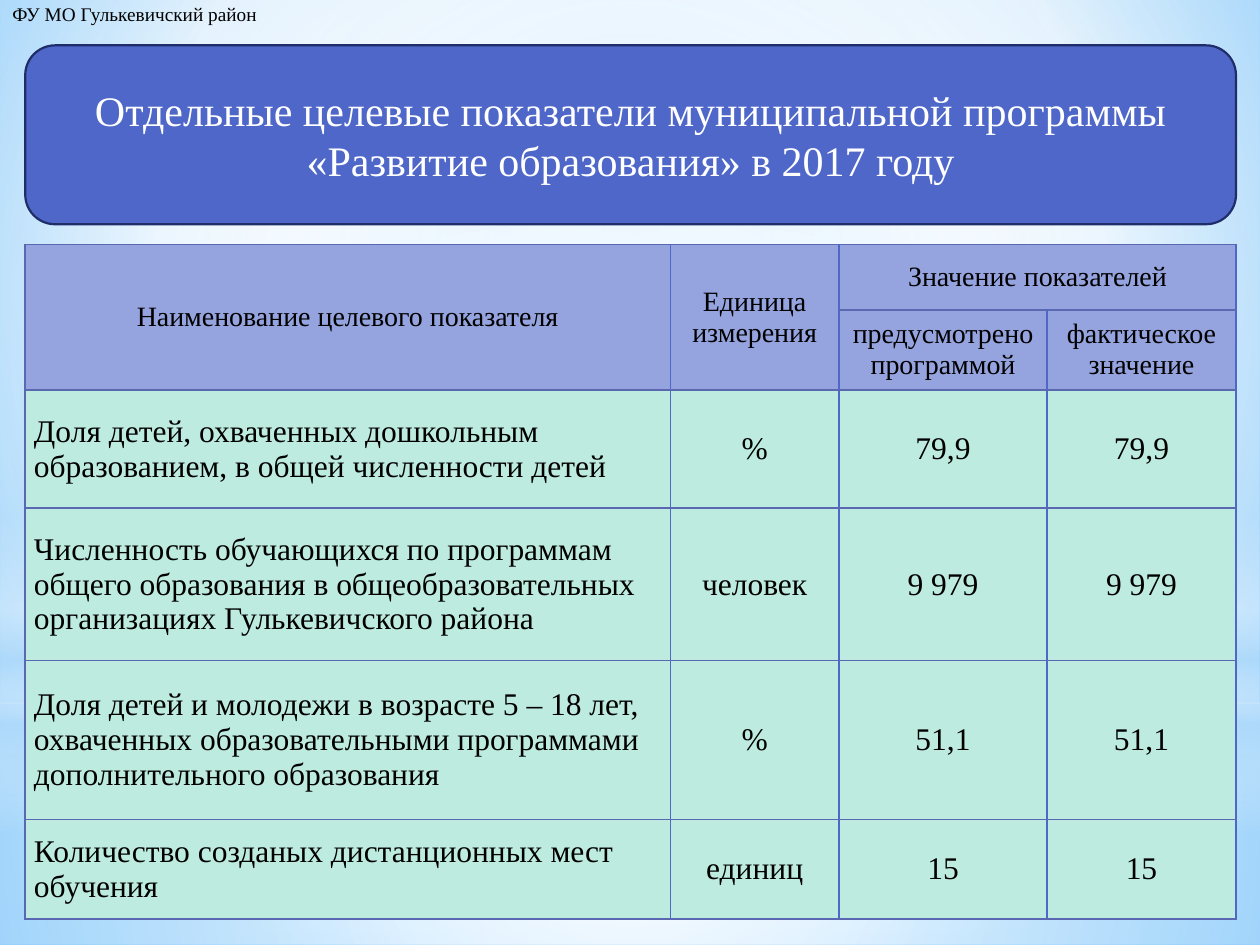
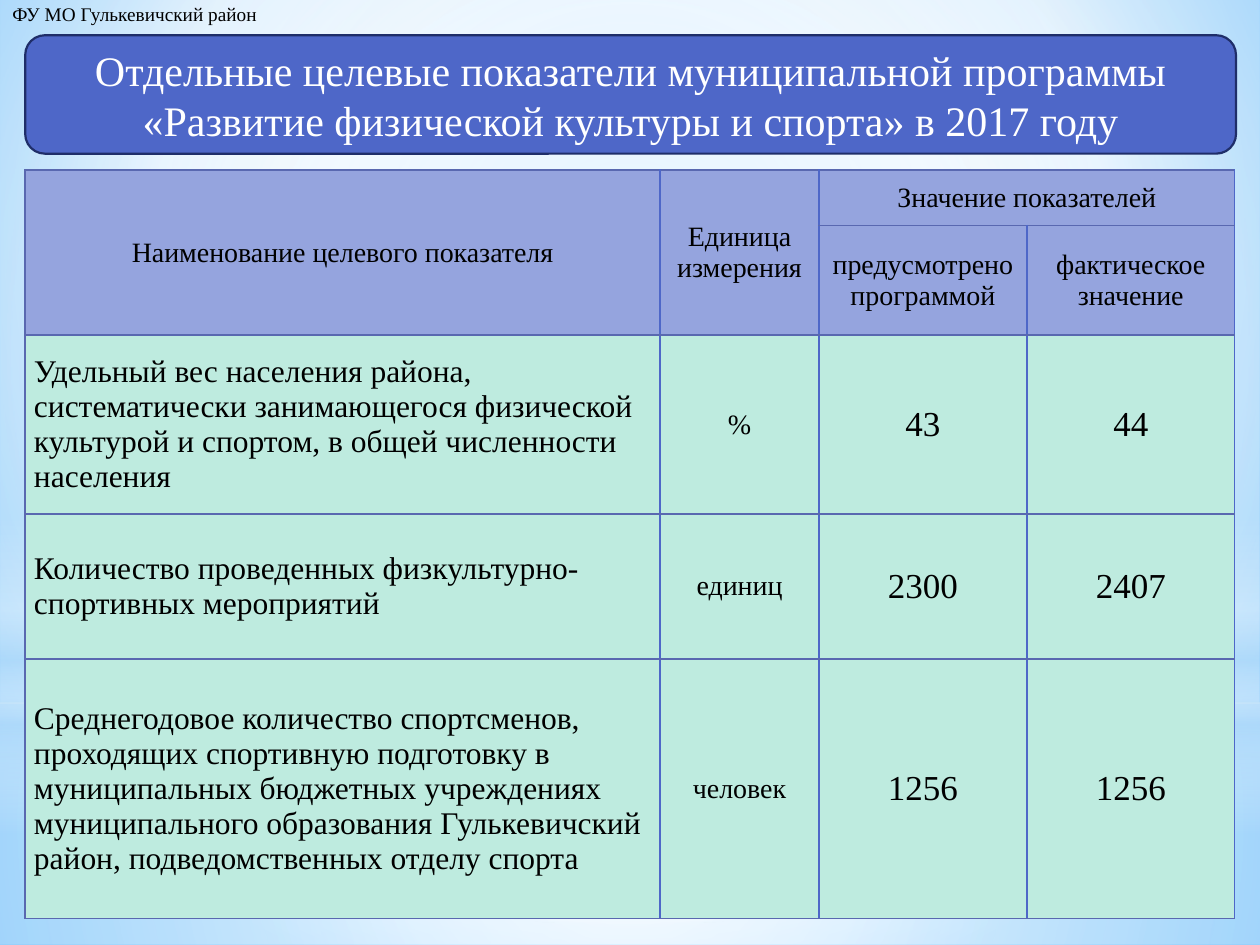
from lxml import etree
from pptx import Presentation
from pptx import util as u
from pptx.dml.color import RGBColor
from pptx.enum import shapes, text
from pptx.oxml import parse_xml
from pptx.oxml.ns import nsdecls, qn

FONT = "Times New Roman"
COLORS = {
    "banner": "4E67C8", "banner_line": "1F2E69", "header": "95A4DE",
    "body": "BEEBDF", "row_rule": "5968B0", "column_rule": "4E67C8",
    "text": "000000", "white": "FFFFFF", "haze": "B4DCFA",
    "sky": "9ED5FF", "deep_sky": "5BB9FF",
}
CENTER = (50, 50, 50, 50)
SKY = [(0, "sky", 100), (60, "white", 100), (100, "deep_sky", 100)]
RECT, OVAL = shapes.MSO_SHAPE.RECTANGLE, shapes.MSO_SHAPE.OVAL
HAZE_LAYERS = [
    (RECT, (0, 5.58, 10, 1.92), CENTER,
     [(0, "white", 91), (37, "white", 76), (100, "haze", 79)]),
    (RECT, (0, 0, 10, 5.58), CENTER,
     [(0, "white", 89), (48, "white", 62), (100, "haze", 79)]),
    (RECT, (0, 4.12, 10, 2.5), None,
     [(0, "white", 0), (29, "white", 30), (45, "haze", 40),
      (55, "white", 26), (65, "haze", 60), (100, "white", 0)]),
    (OVAL, (0, 1.75, 10, 5.58), CENTER,
     [(0, "white", 100), (56, "white", 0)]),
]

SLIDES = [
    {
        "title": "Отдельные целевые показатели муниципальной программы "
                 "«Развитие образования» в 2017 году",
        "banner": (0.2, 0.36, 9.61, 1.42),
        "table": (0.2, 1.94, 9.61, 5.35),
        "columns": [5.12, 1.34, 1.65, 1.5],
        "heights": [0.52, 0.58, 0.94, 1.21, 1.26, 0.79],
        "sizes": [18, 18, 18, 18],
        "rows": [
            ("Доля детей, охваченных дошкольным образованием, "
             "в общей численности детей", "%", "79,9", "79,9"),
            ("Численность обучающихся по программам общего образования "
             "в общеобразовательных организациях Гулькевичского района",
             "человек", "9 979", "9 979"),
            ("Доля детей и молодежи в возрасте 5 – 18 лет, охваченных "
             "образовательными программами дополнительного образования",
             "%", "51,1", "51,1"),
            ("Количество созданых дистанционных мест обучения",
             "единиц", "15", "15"),
        ],
    },
    {
        "title": "Отдельные целевые показатели муниципальной программы "
                 "«Развитие физической культуры и спорта» в 2017 году",
        "banner": (0.2, 0.28, 9.61, 0.94),
        "table": (0.2, 1.35, 9.61, 5.94),
        "columns": [5.04, 1.26, 1.65, 1.65],
        "heights": [0.44, 0.87, 1.42, 1.15, 2.06],
        "sizes": [18, 16, 20, 20],
        "rows": [
            ("Удельный вес населения района, систематически занимающегося "
             "физической культурой и спортом, в общей численности населения",
             "%", "43", "44"),
            ("Количество проведенных физкультурно-спортивных мероприятий",
             "единиц", "2300", "2407"),
            ("Среднегодовое количество спортсменов, проходящих спортивную "
             "подготовку в муниципальных бюджетных учреждениях муниципального "
             "образования Гулькевичский район, подведомственных отделу спорта",
             "человек", "1256", "1256"),
        ],
    },
]


def rgb(name):
    return RGBColor.from_string(COLORS[name])


def inches(box):
    return [u.Inches(length) for length in box]


def style_text(frame, size, color="text", align=text.PP_ALIGN.CENTER):
    for para in frame.paragraphs:
        para.alignment = align
        para.font.name = FONT
        para.font.size = u.Pt(size)
        para.font.color.rgb = rgb(color)


def paint_gradient(owner, fill, stops, focus):
    fill.solid()
    fill.fore_color.rgb = rgb("white")
    stop_xml = "".join(
        f'<a:gs pos="{pos * 1000}"><a:srgbClr val="{COLORS[color]}">'
        f'<a:alpha val="{alpha * 1000}"/></a:srgbClr></a:gs>'
        for pos, color, alpha in stops)
    if focus:
        sides = " ".join(f'{side}="{value * 1000}"' for side, value in zip("ltrb", focus))
        direction = f'<a:path path="circle"><a:fillToRect {sides}/></a:path>'
    else:
        direction = '<a:lin ang="5400000" scaled="0"/>'
    gradient = parse_xml(f'<a:gradFill {nsdecls("a")} rotWithShape="1">'
                         f'<a:gsLst>{stop_xml}</a:gsLst>{direction}</a:gradFill>')
    solid = next(owner.element.iter(qn("a:solidFill")))
    solid.getparent().replace(solid, gradient)


def add_backdrop(page):
    paint_gradient(page, page.background.fill, SKY, (20, 10, 20, 60))
    for kind, box, focus, stops in HAZE_LAYERS:
        layer = page.shapes.add_shape(kind, *inches(box))
        layer.shadow.inherit = False
        layer.line.fill.background()
        paint_gradient(layer, layer.fill, stops, focus)


def add_department(page, box):
    label = page.shapes.add_textbox(*inches(box))
    frame = label.text_frame
    frame.word_wrap = False
    frame.auto_size = text.MSO_AUTO_SIZE.SHAPE_TO_FIT_TEXT
    frame.text = "ФУ МО Гулькевичский район"
    style_text(frame, 11, align=text.PP_ALIGN.LEFT)


def add_banner(page, box, title):
    banner = page.shapes.add_shape(shapes.MSO_SHAPE.ROUNDED_RECTANGLE, *inches(box))
    banner.shadow.inherit = False
    banner.fill.solid()
    banner.fill.fore_color.rgb = rgb("banner")
    banner.line.color.rgb = rgb("banner_line")
    banner.line.width = u.Pt(1.25)
    frame = banner.text_frame
    frame.word_wrap = True
    frame.vertical_anchor = text.MSO_ANCHOR.MIDDLE
    frame.text = title
    style_text(frame, 24, "white")


def style_cell(cell, fill, first_column):
    properties = cell._tc.get_or_add_tcPr()
    left = "row_rule" if first_column else "column_rule"
    edges = {"lnL": left, "lnR": "column_rule", "lnT": "row_rule", "lnB": "row_rule"}
    for tag, color in edges.items():
        edge = etree.SubElement(properties, qn(f"a:{tag}"), w=str(u.Pt(1)))
        solid = etree.SubElement(edge, qn("a:solidFill"))
        etree.SubElement(solid, qn("a:srgbClr"), val=COLORS[color])
    cell.fill.solid()
    cell.fill.fore_color.rgb = rgb(fill)
    cell.vertical_anchor = text.MSO_ANCHOR.MIDDLE


def fill_header(table):
    labels = {
        (0, 0): "Наименование целевого показателя",
        (0, 1): "Единица\nизмерения",
        (0, 2): "Значение показателей",
        (1, 2): "предусмотрено программой",
        (1, 3): "фактическое значение",
    }
    for row in range(2):
        for column in range(4):
            cell = table.cell(row, column)
            style_cell(cell, "header", column == 0)
            cell.text = labels.get((row, column), "")
            style_text(cell.text_frame, 16)
    for start, end in [((0, 0), (1, 0)), ((0, 1), (1, 1)), ((0, 2), (0, 3))]:
        table.cell(*start).merge(table.cell(*end))


def fill_indicators(table, rows, sizes):
    for row, values in enumerate(rows, 2):
        for column, (value, size) in enumerate(zip(values, sizes)):
            cell = table.cell(row, column)
            style_cell(cell, "body", column == 0)
            cell.margin_left = cell.margin_right = u.Inches(0.07)
            cell.margin_top = cell.margin_bottom = 0
            cell.text = value
            align = text.PP_ALIGN.CENTER if column else text.PP_ALIGN.LEFT
            style_text(cell.text_frame, size, align=align)


def add_indicator_table(page, box, content):
    table = page.shapes.add_table(len(content["heights"]), 4, *inches(box)).table
    table.first_row = table.horz_banding = False
    for column, width in zip(table.columns, content["columns"]):
        column.width = u.Inches(width)
    for row, height in zip(table.rows, content["heights"]):
        row.height = u.Inches(height)
    fill_header(table)
    fill_indicators(table, content["rows"], content["sizes"])


def add_indicator_slide(deck, content):
    page = deck.slides.add_slide(deck.slide_layouts[6])
    add_backdrop(page)
    add_department(page, (0, -0.03, 2.18, 0.29))
    add_indicator_table(page, content["table"], content)
    add_banner(page, content["banner"], content["title"])


def main():
    deck = Presentation()
    deck.slide_width, deck.slide_height = u.Inches(10), u.Inches(7.5)
    for content in SLIDES:
        add_indicator_slide(deck, content)
    deck.save("out.pptx")


if __name__ == "__main__":
    main()
